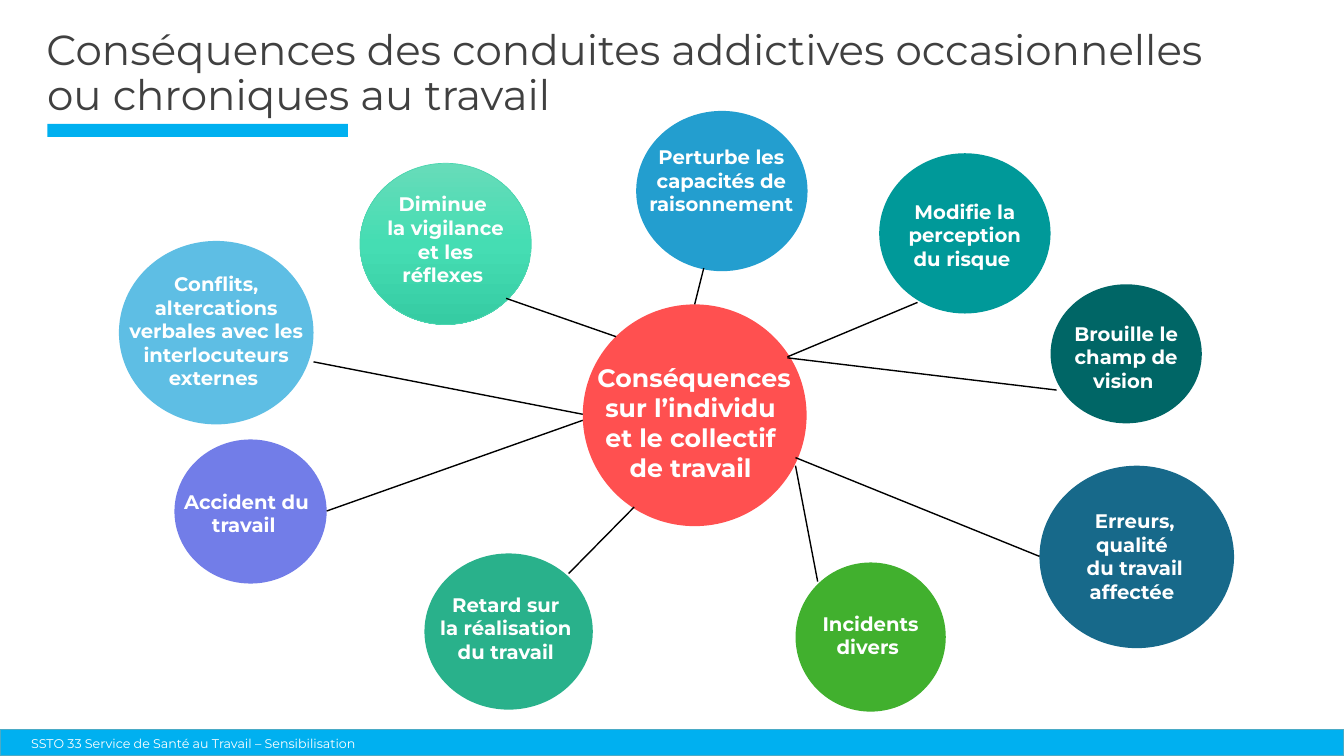
from copy import deepcopy
from dataclasses import dataclass
from typing import Any, NamedTuple

from pptx import Presentation
from pptx.dml.color import RGBColor as Rgb
from pptx.enum.shapes import MSO_CONNECTOR as Connector
from pptx.enum.shapes import MSO_SHAPE as Preset
from pptx.enum.text import MSO_AUTO_SIZE as AutoSize
from pptx.enum.text import PP_ALIGN as Align
from pptx.oxml.ns import qn
from pptx.oxml.xmlchemy import OxmlElement
from pptx.util import Emu, Pt

EMU_PER_PX = 9144  # 100 px to the inch


@dataclass(frozen=True)
class Theme:
    font: str = "Montserrat"
    title: str = "404040"
    light: str = "FFFFFF"
    link: str = "000000"
    accent: str = "00B0F0"
    footer_edge: str = "4AABC6"
    hub: str = "FF5050"
    soft_edge: str = "4CD6B0"
    title_size: int = 30
    hub_size: int = 18
    label_size: int = 14
    footer_size: int = 9
    title_leading: float = 46.7


class Box(NamedTuple):
    left: int
    top: int
    width: int
    height: int


class Link(NamedTuple):
    x1: int
    y1: int
    x2: int
    y2: int


@dataclass(frozen=True)
class Bubble:
    circle: Box
    colours: tuple[str, ...]
    label: Box
    paragraphs: tuple[str, ...]
    link: Link | None = None
    size: int = 14
    edge: str | None = None


THEME = Theme()

HUB = Bubble(Box(578, 302, 222, 220), (THEME.hub,), Box(560, 354, 257, 131),
             ("Conséquences sur l’individu ", "et le collectif ", "de travail "),
             size=THEME.hub_size)

CONSEQUENCES = (
    Bubble(Box(631, 110, 170, 159), ("239ECF",), Box(633, 139, 165, 81),
           ("Perturbe les capacités de raisonnement",), Link(698, 266, 689, 302)),
    Bubble(Box(872, 152, 170, 159), ("009999",), Box(887, 193, 140, 81),
           ("Modifie la perception du risque ",), Link(910, 300, 781, 354)),
    Bubble(Box(1042, 282, 150, 138), ("006666",), Box(1042, 314, 150, 81),
           ("Brouille le champ de vision ",), Link(781, 355, 1048, 387)),
    Bubble(Box(1031, 462, 193, 181), ("17698A",), Box(1041, 500, 169, 104),
           ("Erreurs, qualité ", "du travail affectée "), Link(789, 454, 1031, 552)),
    Bubble(Box(789, 558, 149, 148), ("41B02E",), Box(802, 602, 123, 57),
           ("Incidents divers ",), Link(789, 462, 811, 577)),
    Bubble(Box(421, 549, 167, 155), ("29B18B",), Box(171, 583, 667, 81),
           ("Retard sur ", "la réalisation ", "du travail "), Link(564, 569, 629, 503)),
    Bubble(Box(173, 436, 151, 143), ("727DE8",), Box(165, 481, 159, 57),
           ("Accident du travail ",), Link(324, 507, 578, 417)),
    Bubble(Box(118, 239, 193, 182), ("5EBEE4",), Box(109, 265, 211, 128),
           ("Conflits, altercations verbales avec les interlocuteurs externes ",),
           Link(311, 359, 578, 411)),
    Bubble(Box(357, 162, 170, 160), ("67DCB9", "45DDB3", "36CCA3"), Box(374, 186, 136, 104),
           ("Diminue ", "la vigilance et les réflexes "), Link(502, 296, 611, 334),
           edge=THEME.soft_edge),
)


def px(value: int) -> Emu:
    return Emu(value * EMU_PER_PX)


def apply_format(target: Any, values: dict[str, Any]) -> None:
    for attribute, value in values.items():
        setattr(target, attribute, value)


def fill_gradient(shape: Any, colours: tuple[str, ...]) -> None:
    """Fill from top to bottom with evenly spaced colours."""
    shape.fill.gradient()
    shape.fill.gradient_angle = 270
    stop_list = shape._element.spPr.find(".//" + qn("a:gsLst"))
    while len(stop_list) < len(colours):
        stop_list.append(deepcopy(stop_list[0]))
    for index, (stop, colour) in enumerate(zip(shape.fill.gradient_stops, colours)):
        stop.position = index / (len(colours) - 1)
        stop.color.rgb = Rgb.from_string(colour)


def add_area(slide: Any, preset: Preset, box: Box, colours: tuple[str, ...],
             edge: str | None = None, edge_width: float = 1) -> None:
    area = slide.shapes.add_shape(preset, *map(px, box))
    area.shadow.inherit = False
    if len(colours) > 1:
        fill_gradient(area, colours)
    else:
        area.fill.solid()
        area.fill.fore_color.rgb = Rgb.from_string(colours[0])
    if edge:
        area.line.color.rgb = Rgb.from_string(edge)
        area.line.width = Pt(edge_width)
    else:
        area.line.fill.background()


def add_link(slide: Any, link: Link) -> None:
    line = slide.shapes.add_connector(Connector.STRAIGHT, *map(px, link))
    line.line.color.rgb = Rgb.from_string(THEME.link)
    line.line.width = Pt(1)
    line._element.spPr.append(OxmlElement("a:effectLst"))


def add_text(slide: Any, box: Box, paragraphs: tuple[str, ...], size: int, colour: str,
             bold: bool = False, inset: bool = True, **layout: Any) -> None:
    """Write paragraphs; layout holds paragraph attributes such as alignment."""
    frame = slide.shapes.add_textbox(*map(px, box)).text_frame
    apply_format(frame, {"word_wrap": True, "auto_size": AutoSize.SHAPE_TO_FIT_TEXT})
    if not inset:
        sides = ("left", "top", "right", "bottom")
        apply_format(frame, {f"margin_{side}": 0 for side in sides})
    frame.text = "\n".join(paragraphs)
    for paragraph in frame.paragraphs:
        apply_format(paragraph, layout)
        for run in paragraph.runs:
            apply_format(run.font, {"name": THEME.font, "size": Pt(size), "bold": bold})
            run.font.color.rgb = Rgb.from_string(colour)


def main() -> None:
    deck = Presentation()
    apply_format(deck, {"slide_width": px(1333), "slide_height": px(750)})
    slide = deck.slides.add_slide(deck.slide_layouts[6])

    bubbles = (HUB, *CONSEQUENCES)
    for bubble in bubbles:
        add_area(slide, Preset.OVAL, bubble.circle, bubble.colours, bubble.edge, 0.5)
    for bubble in CONSEQUENCES:
        add_link(slide, bubble.link)
    for bubble in bubbles:
        add_text(slide, bubble.label, bubble.paragraphs, bubble.size, THEME.light,
                 bold=True, alignment=Align.CENTER)

    leading = Pt(THEME.title_leading)
    add_text(slide, Box(46, 9, 1287, 60),
             ("Conséquences des conduites addictives occasionnelles",),
             THEME.title_size, THEME.title, inset=False, line_spacing=leading)
    add_text(slide, Box(37, 48, 1084, 70), ("ou chroniques au travail",),
             THEME.title_size, THEME.title, line_spacing=leading)
    add_area(slide, Preset.RECTANGLE, Box(47, 123, 298, 13), (THEME.accent,))

    add_area(slide, Preset.RECTANGLE, Box(0, 724, 1333, 26), (THEME.accent,),
             THEME.footer_edge)
    add_text(slide, Box(21, 725, 905, 25),
             ("SSTO 33 Service de Santé au Travail – Sensibilisation",),
             THEME.footer_size, THEME.light)
    deck.save("out.pptx")


if __name__ == "__main__":
    main()
